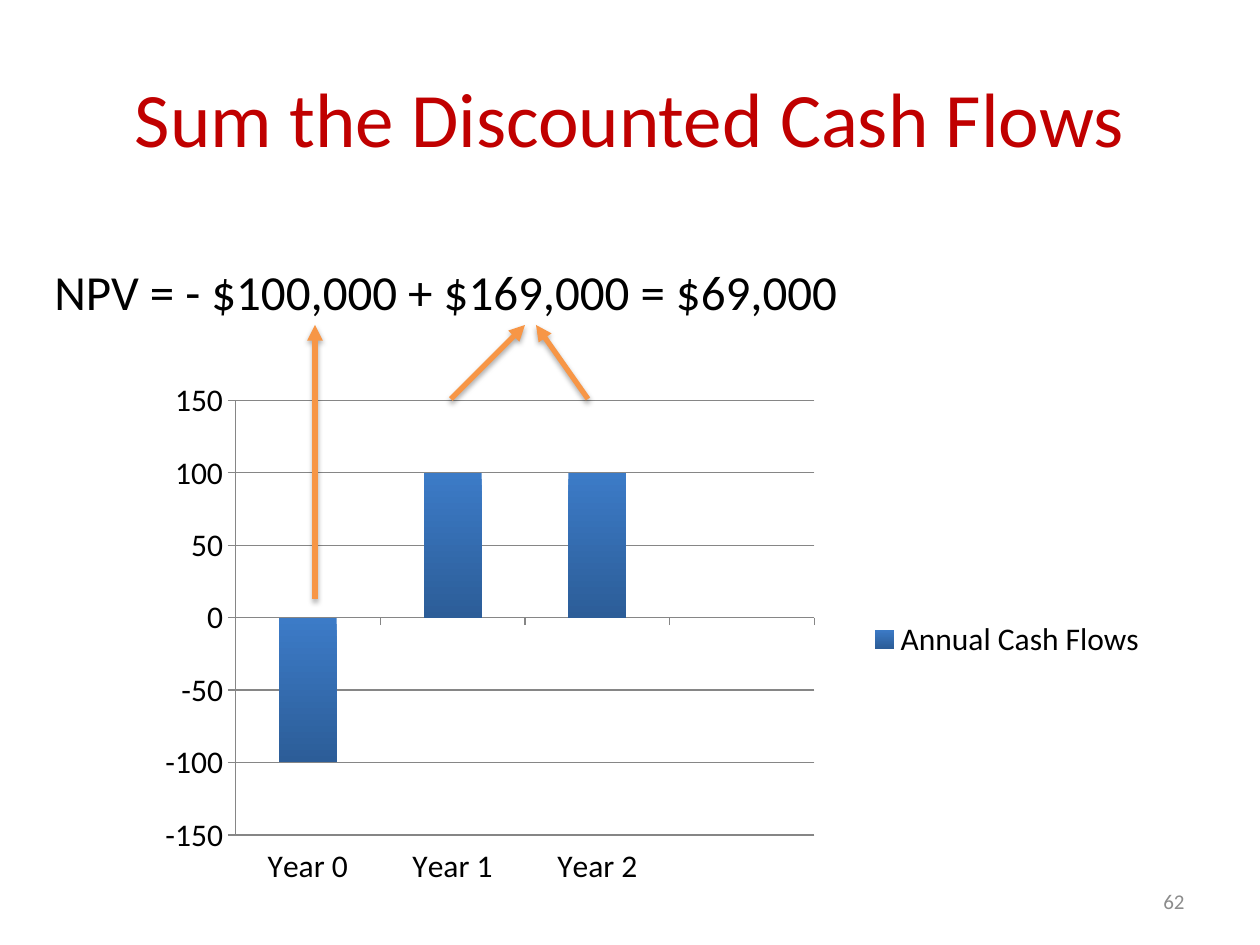
from lxml import etree
from pptx import Presentation
from pptx import util as u
from pptx.chart.data import CategoryChartData
from pptx.dml.color import RGBColor
from pptx.enum import chart as charts, shapes, text
from pptx.oxml import parse_xml
from pptx.oxml.ns import nsdecls, qn

PX_PER_INCH = 126
FONT = "Calibri"
BLACK, GREY, RED, ORANGE = "000000", "868686", "C00000", "F79646"

TITLE = ("Sum the Discounted Cash Flows", (63, 38, 1134, 157))
FORMULA = ("NPV = - $100,000 + $169,000 = $69,000", (42, 255, 1166, 72))
PAGE_NUMBER = ("62", (903, 876, 294, 50))

CHART_BOX = (144, 374, 1016, 530)
PLOT_SHARE = {"x": 0.09, "y": 0.05, "w": 0.57, "h": 0.82}
CATEGORIES = ["Year 0", "Year 1", "Year 2", ""]
SERIES = ("Annual Cash Flows", [-100, 100, 100, None])
BAR_GRADIENT = ("3C7BC7", "2C5D98")

ARROWS = [  # from x, from y, to x, to y
    (315, 599, 315, 325),
    (451, 399, 525, 325),
    (588, 399, 536, 325),
]


def px(*lengths):
    return [u.Emu(round(length * 914400 / PX_PER_INCH)) for length in lengths]


def color(hex_string):
    return RGBColor.from_string(hex_string)


def write(box, words, size=18, fill=BLACK, align=text.PP_ALIGN.LEFT,
          anchor=text.MSO_ANCHOR.TOP):
    frame = box.text_frame
    frame.word_wrap = True
    frame.vertical_anchor = anchor
    para = frame.paragraphs[0]
    para.alignment = align
    span = para.add_run()
    span.text = words
    span.font.name = FONT
    span.font.size = u.Pt(size)
    span.font.color.rgb = color(fill)


def place_plot(chart):
    """Fix the inner plot area as shares of the chart's frame."""
    area = chart._chartSpace.chart.plotArea
    for old in area.findall(qn("c:layout")):
        area.remove(old)
    layout = etree.Element(qn("c:layout"))
    manual = etree.SubElement(layout, qn("c:manualLayout"))
    settings = {"layoutTarget": "inner", "xMode": "edge", "yMode": "edge", **PLOT_SHARE}
    for name, value in settings.items():
        etree.SubElement(manual, qn("c:" + name)).set("val", str(value))
    area.insert(0, layout)


def add_cash_flow_chart(page):
    data = CategoryChartData()
    data.categories = CATEGORIES
    data.add_series(*SERIES)
    chart = page.shapes.add_chart(
        charts.XL_CHART_TYPE.COLUMN_CLUSTERED, *px(*CHART_BOX), data).chart
    chart.has_title = False
    chart.font.name = FONT
    chart.font.size = u.Pt(18)
    chart.font.color.rgb = color(BLACK)
    chart.has_legend = True
    chart.legend.position = charts.XL_LEGEND_POSITION.RIGHT
    chart.legend.include_in_layout = False

    plot = chart.plots[0]
    plot.vary_by_categories = False
    plot.gap_width = 150
    bars = plot.series[0]
    bars.invert_if_negative = False
    fill = bars.format.fill
    fill.gradient()
    fill.gradient_angle = 270
    for stop, shade in zip(fill.gradient_stops, BAR_GRADIENT):
        stop.color.rgb = color(shade)

    values = chart.value_axis
    values.minimum_scale, values.maximum_scale, values.major_unit = -150, 150, 50
    values.has_major_gridlines = True
    chart.category_axis.tick_label_position = charts.XL_TICK_LABEL_POSITION.LOW
    for part in (values, chart.category_axis, values.major_gridlines):
        part.format.line.color.rgb = color(GREY)
        part.format.line.width = u.Pt(0.75)
    place_plot(chart)


def add_arrow(page, ends):
    arrow = page.shapes.add_connector(shapes.MSO_CONNECTOR.STRAIGHT, *px(*ends))
    arrow.line.color.rgb = color(ORANGE)
    arrow.line.width = u.Pt(3)
    etree.SubElement(arrow.line._get_or_add_ln(), qn("a:tailEnd")).set("type", "triangle")
    arrow._element.spPr.append(parse_xml(
        f'<a:effectLst {nsdecls("a")}><a:outerShdw blurRad="40000" dist="23000" '
        f'dir="5400000" rotWithShape="0"><a:srgbClr val="{BLACK}">'
        '<a:alpha val="35000"/></a:srgbClr></a:outerShdw></a:effectLst>'))


def main():
    deck = Presentation()
    deck.slide_width, deck.slide_height = u.Inches(10), u.Inches(7.5)
    page = deck.slides.add_slide(deck.slide_layouts.get_by_name("Title Only"))

    words, place = TITLE
    title = page.shapes.title
    title.left, title.top, title.width, title.height = px(*place)
    write(title, words, size=44, fill=RED, align=text.PP_ALIGN.CENTER,
          anchor=text.MSO_ANCHOR.MIDDLE)

    add_cash_flow_chart(page)

    words, place = FORMULA
    write(page.shapes.add_textbox(*px(*place)), words, size=28)

    for ends in ARROWS:
        add_arrow(page, ends)

    words, place = PAGE_NUMBER
    write(page.shapes.add_textbox(*px(*place)), words, size=12, fill="8C8C8C",
          align=text.PP_ALIGN.RIGHT, anchor=text.MSO_ANCHOR.MIDDLE)
    deck.save("out.pptx")


if __name__ == "__main__":
    main()
